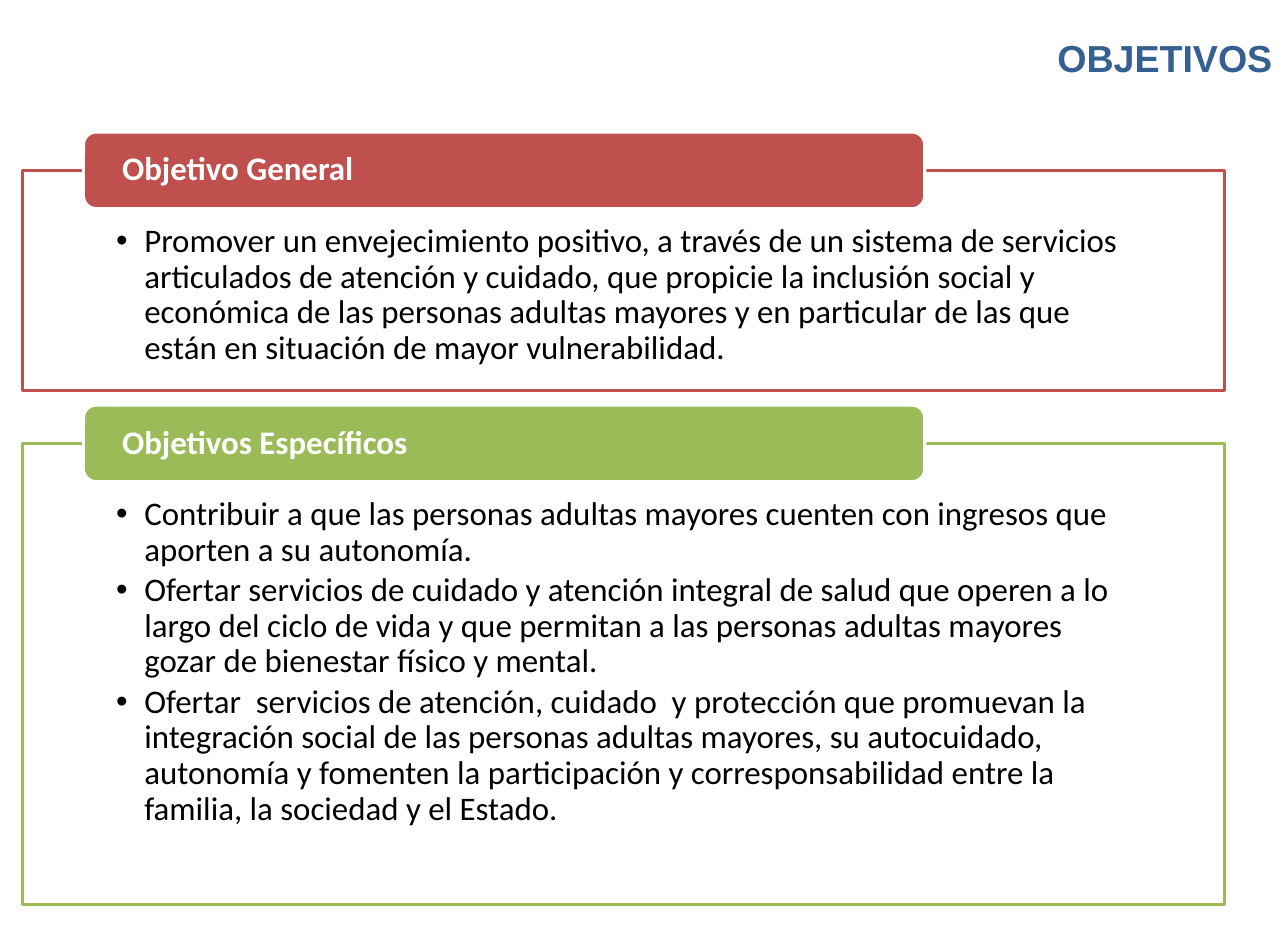
from lxml.etree import SubElement
from pptx import Presentation
from pptx.dml.color import RGBColor
from pptx.enum.shapes import MSO_SHAPE as Shape
from pptx.enum.text import MSO_ANCHOR as Anchor, PP_ALIGN as Align
from pptx.oxml.ns import qn
from pptx.util import Inches, Pt

COLORS = {
    "title": "376092",
    "general": "C0504D",
    "specific": "9BBB59",
    "white": "FFFFFF",
    "black": "000000",
}

SECTIONS = [
    ("Objetivo General", "general", 1.51, 1.95, [
        "Promover un envejecimiento positivo, a través de un sistema de servicios articulados de atención y cuidado, que propicie la inclusión social y económica de las personas adultas mayores y en particular de las que están en situación de mayor vulnerabilidad.",
    ]),
    ("Objetivos Específicos", "specific", 3.93, 4.09, [
        "Contribuir a que las personas adultas mayores cuenten con ingresos que aporten a su autonomía.",
        "Ofertar servicios de cuidado y atención integral de salud que operen a lo largo del ciclo de vida y que permitan a las personas adultas mayores gozar de bienestar físico y mental.",
        "Ofertar  servicios de atención, cuidado  y protección que promuevan la integración social de las personas adultas mayores, su autocuidado, autonomía y fomenten la participación y corresponsabilidad entre la familia, la sociedad y el Estado.",
    ]),
]


def color(name):
    return RGBColor.from_string(COLORS[name])


def set_frame(shape, anchor, left, top, right, bottom):
    frame = shape.text_frame
    frame.word_wrap = True
    frame.vertical_anchor = anchor
    frame.margin_left, frame.margin_top = Inches(left), Inches(top)
    frame.margin_right, frame.margin_bottom = Inches(right), Inches(bottom)
    return frame


def style_paragraph(paragraph, text, color_name, size=21, font="Calibri", bold=False, align=Align.LEFT):
    paragraph.text = text
    paragraph.alignment = align
    paragraph.line_spacing = 0.9
    paragraph.font.name = font
    paragraph.font.size = Pt(size)
    paragraph.font.bold = bold
    paragraph.font.color.rgb = color(color_name)


def add_bullet(paragraph):
    properties = paragraph._p.get_or_add_pPr()
    properties.set("marL", str(Inches(0.25)))
    properties.set("indent", str(Inches(-0.25)))
    SubElement(properties, qn("a:buFont"), typeface="Arial")
    SubElement(properties, qn("a:buChar"), char="•")


def add_box(slide, kind, left, top, width, height, fill, line):
    shape = slide.shapes.add_shape(kind, Inches(left), Inches(top), Inches(width), Inches(height))
    shape.shadow.inherit = False
    shape.fill.solid()
    shape.fill.fore_color.rgb = color(fill)
    shape.line.color.rgb = color(line)
    shape.line.width = Pt(2)
    return shape


def add_title(slide, text):
    title = slide.shapes.add_textbox(Inches(4.99), 0, Inches(6.39), Inches(1.07))
    frame = set_frame(title, Anchor.MIDDLE, 0.1, 0.05, 0.1, 0.05)
    style_paragraph(frame.paragraphs[0], text, "title", 24, "Arial", True, Align.RIGHT)


def add_section(slide, heading, accent, top, height, objectives):
    panel = add_box(slide, Shape.RECTANGLE, 0.2, top, 10.66, height, "white", accent)
    frame = set_frame(panel, Anchor.TOP, 0.83, 0.48, 0.83, 0.16)
    for index, objective in enumerate(objectives):
        paragraph = frame.add_paragraph() if index else frame.paragraphs[0]
        add_bullet(paragraph)
        style_paragraph(paragraph, objective, "black")
        paragraph.space_after = Pt(3.15)

    label = add_box(slide, Shape.ROUNDED_RECTANGLE, 0.74, top - 0.34, 7.46, 0.68, accent, "white")
    frame = set_frame(label, Anchor.MIDDLE, 0.31, 0, 0.31, 0)
    style_paragraph(frame.paragraphs[0], heading, "white", bold=True)


def main():
    presentation = Presentation()
    presentation.slide_width = Inches(11.42)
    presentation.slide_height = Inches(8.27)
    slide = presentation.slides.add_slide(presentation.slide_layouts[6])
    add_title(slide, "OBJETIVOS")
    for section in SECTIONS:
        add_section(slide, *section)
    presentation.save("out.pptx")


if __name__ == "__main__":
    main()
